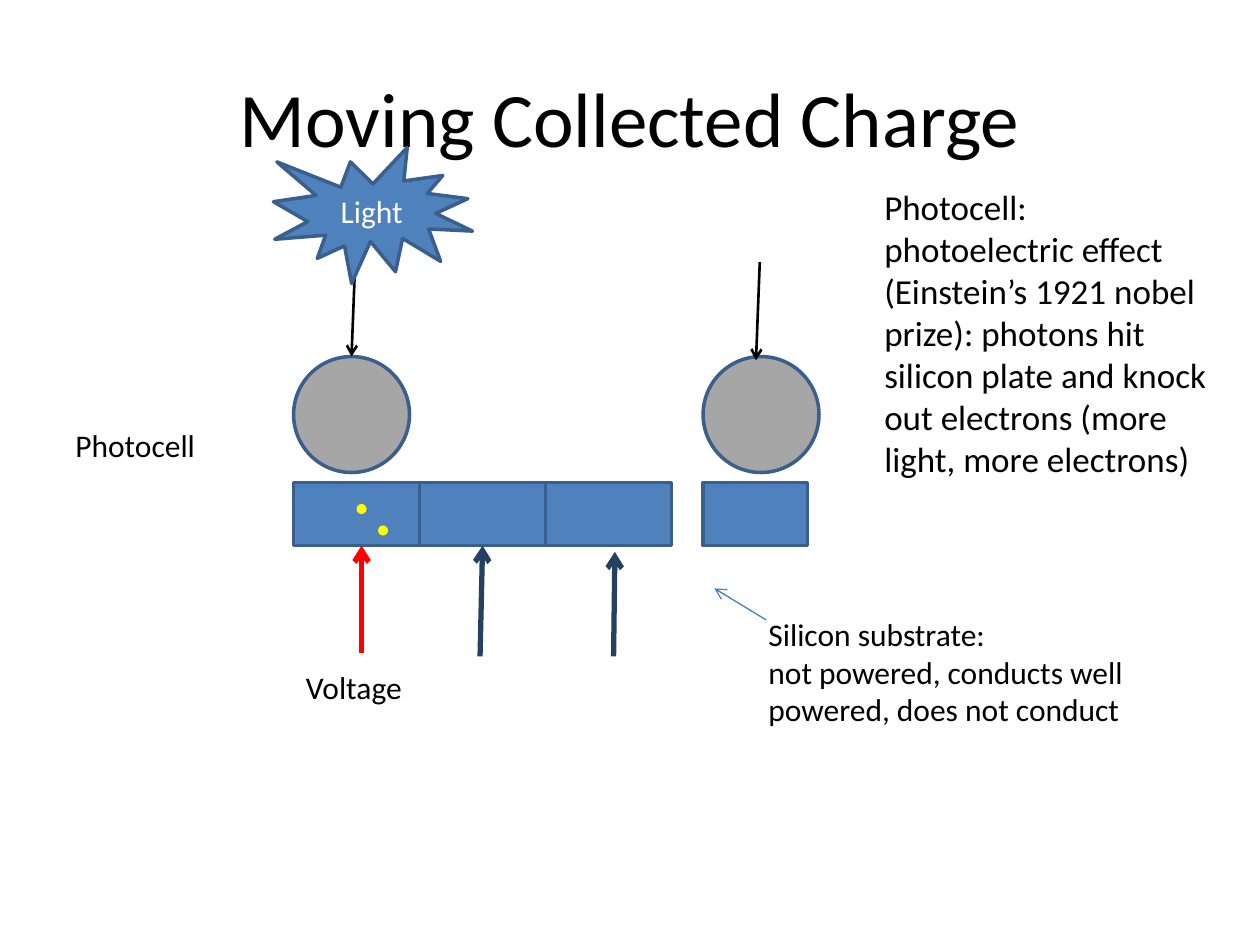
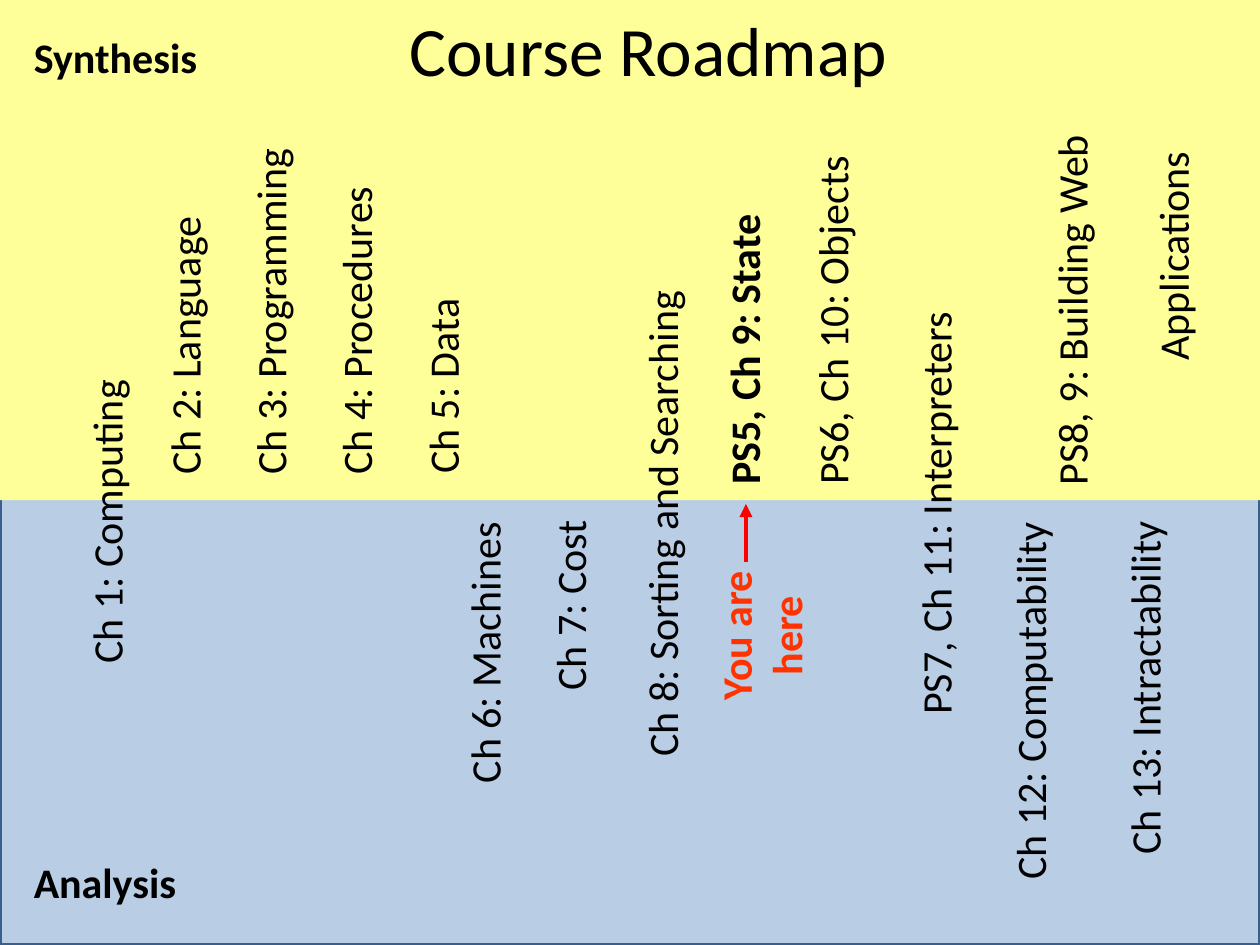
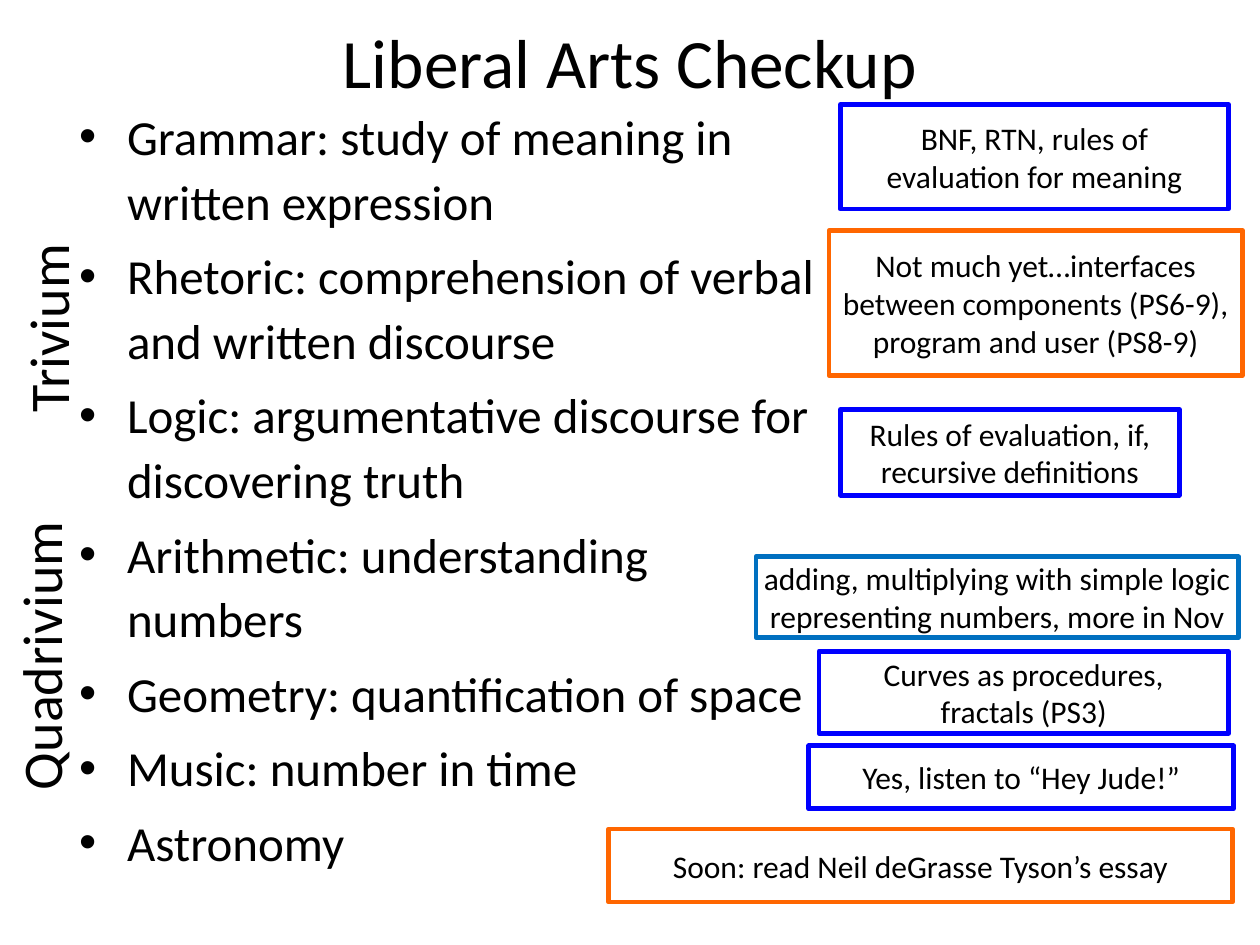
from lxml import etree
from pptx import Presentation
from pptx.dml.color import RGBColor
from pptx.enum.shapes import MSO_CONNECTOR, MSO_SHAPE
from pptx.enum.text import MSO_ANCHOR, PP_ALIGN
from pptx.oxml.ns import qn
from pptx.util import Inches, Pt

RECT, OVAL = MSO_SHAPE.RECTANGLE, MSO_SHAPE.OVAL
BURST, DOT = MSO_SHAPE.EXPLOSION1, MSO_SHAPE.FLOWCHART_CONNECTOR
LEFT, CENTER = PP_ALIGN.LEFT, PP_ALIGN.CENTER
TOP, MIDDLE = MSO_ANCHOR.TOP, MSO_ANCHOR.MIDDLE
STRAIGHT = MSO_CONNECTOR.STRAIGHT

FONT = "Calibri"
BLACK = RGBColor(0x00, 0x00, 0x00)
WHITE = RGBColor(0xFF, 0xFF, 0xFF)
GRAY = RGBColor(0xA6, 0xA6, 0xA6)
BLUE = RGBColor(0x4F, 0x81, 0xBD)
EDGE = RGBColor(0x3A, 0x5F, 0x8C)
THIN = RGBColor(0x4B, 0x7E, 0xBC)
NAVY = RGBColor(0x25, 0x40, 0x61)
PALE = RGBColor(0xB9, 0xCD, 0xE5)
CREAM = RGBColor(0xFF, 0xFF, 0x99)
YELLOW = RGBColor(0xFF, 0xFF, 0x00)
RED = RGBColor(0xFF, 0x00, 0x00)
CORAL = RGBColor(0xFF, 0x33, 0x00)
DONE = RGBColor(0x00, 0x00, 0xFF)
PART = RGBColor(0x00, 0x70, 0xC0)
SOON = RGBColor(0xFF, 0x66, 0x00)
TITLE = dict(align=CENTER, anchor=MIDDLE, wrap=True)


def add(slide, at, text="", kind=None, fill=None, line=None, width=2, size=18,
        color=BLACK, bold=False, align=LEFT, anchor=TOP, wrap=False, turn=0):
    """Add a text box, or a preset shape if kind is given; at is left, top, width, height."""
    place = [Inches(n) for n in at]
    if kind is None:
        shape = slide.shapes.add_textbox(*place)
    else:
        shape = slide.shapes.add_shape(kind, *place)
        shape.shadow.inherit = False
        if fill is None:
            shape.fill.background()
        else:
            shape.fill.solid()
            shape.fill.fore_color.rgb = fill
        if line is None:
            shape.line.fill.background()
        else:
            shape.line.color.rgb = line
            shape.line.width = Pt(width)
    shape.rotation = turn
    if text:
        frame = shape.text_frame
        frame.text = text
        frame.word_wrap = wrap
        frame.vertical_anchor = anchor
        for para in frame.paragraphs:
            para.alignment = align
            for run in para.runs:
                run.font.name = FONT
                run.font.size = Pt(size)
                run.font.bold = bold
                run.font.color.rgb = color
    return shape


def arrow(slide, start, end, color, width, head="arrow"):
    line = slide.shapes.add_connector(STRAIGHT, *[Inches(n) for n in start + end])
    line.line.color.rgb = color
    line.line.width = Pt(width)
    etree.SubElement(line.line._get_or_add_ln(), qn("a:tailEnd"), type=head)
    etree.SubElement(line._element.spPr, qn("a:effectLst"))
    return line


deck = Presentation()
deck.slide_width, deck.slide_height = Inches(10), Inches(7.5)
blank = deck.slide_layouts[6]

# Moving Collected Charge
slide = deck.slides.add_slide(blank)
add(slide, (0.5, 0.3, 9, 1.25), "Moving Collected Charge", size=44, **TITLE)
for left in (2.33, 5.58):
    add(slide, (left, 2.83, 0.92, 0.92), kind=OVAL, fill=GRAY, line=EDGE)
arrow(slide, (2.82, 2.06), (2.79, 2.83), BLACK, 1.5)
arrow(slide, (6.03, 2.08), (6, 2.86), BLACK, 1.5)
cells = [add(slide, (left, 3.83, wide, 0.5), kind=RECT, fill=BLUE, line=EDGE)
         for left, wide in ((2.33, 1), (3.33, 1), (4.33, 1), (5.58, 0.83))]
add(slide, (0.5, 3.33, 1.16, 0.4), "Photocell")
add(slide, (2.17, 1.17, 1.58, 1.08), "Light", BURST, BLUE, EDGE,
    color=WHITE, align=CENTER, anchor=MIDDLE)
add(slide, (6, 4.83, 3.08, 1.01),
    "Silicon substrate:\nnot powered, conducts well\npowered, does not conduct")
arrow(slide, (6.08, 4.92), (5.67, 4.67), THIN, 0.75)
arrow(slide, (2.87, 5.18), (2.87, 4.33), RED, 3)
gate = arrow(slide, (3.81, 5.21), (3.83, 4.33), NAVY, 3)
gate.end_connect(cells[1], 2)
arrow(slide, (4.87, 5.21), (4.88, 4.38), NAVY, 3)
add(slide, (2.33, 5.25, 0.97, 0.4), "Voltage")
for left, top in ((2.83, 4), (3, 4.17)):
    add(slide, (left, top, 0.08, 0.08), kind=DOT, fill=YELLOW)
add(slide, (6.92, 1.42, 3, 2.46),
    "Photocell:\nphotoelectric effect (Einstein’s 1921 nobel prize): photons hit "
    "silicon plate and knock out electrons (more light, more electrons)",
    size=20, wrap=True)

# Course Roadmap
slide = deck.slides.add_slide(blank)
add(slide, (0, 3.92, 10, 3.58), kind=RECT, fill=PALE, line=EDGE)
add(slide, (0, 0, 10, 3.97), kind=RECT, fill=CREAM)
add(slide, (2.61, 0.01, 5.07, 0.75), "Course Roadmap", size=39.6, **TITLE)
add(slide, (0.17, 0.2, 1.51, 0.5), "Synthesis", size=24, bold=True)
add(slide, (0.17, 6.75, 1.34, 0.5), "Analysis", size=24, bold=True)

# Text, centre x, centre y, length
topics = [
    ("Ch 1: Computing", 0.84, 4.13, 2.47),
    ("Ch 2: Language", 1.46, 2.73, 2.27),
    ("Ch 3: Programming", 2.14, 2.46, 2.81),
    ("Ch 4: Procedures", 2.82, 2.61, 2.51),
    ("Ch 5: Data", 3.51, 3.06, 1.6),
    ("Ch 6: Machines", 3.84, 5.17, 2.29),
    ("Ch 7: Cost", 4.52, 4.8, 1.56),
    ("Ch 8: Sorting and Searching", 5.25, 4.14, 3.93),
    ("PS5, Ch 9: State", 5.9, 2.76, 2.37),
    ("PS6, Ch 10: Objects", 6.6, 2.53, 2.83),
    ("PS7, Ch 11: Interpreters", 7.42, 4.06, 3.42),
    ("Ch 12: Computability", 8.17, 5.55, 3.06),
    ("Ch 13: Intractability", 9.08, 5.45, 2.86),
]
for text, x, y, size in topics:
    add(slide, (x - size / 2, y - 0.25, size, 0.5), text, size=24,
        bold=text.startswith("PS5"), turn=270)
web = add(slide, (7.16, 1.95, 3.09, 0.91), "PS8, 9: Building Web\nApplications",
          size=24, wrap=True, turn=270)
last = web.text_frame.paragraphs[1]
last.space_before = Pt(29)
last._p.get_or_add_pPr().set("marL", str(Inches(0.99)))
arrow(slide, (5.92, 4.46), (5.92, 4), RED, 2.5, "triangle")
add(slide, (5.33, 4.59, 1.42, 0.91), "You are here", size=24, color=CORAL,
    bold=True, align=CENTER, wrap=True, turn=270)

# Liberal Arts Checkup
slide = deck.slides.add_slide(blank)
add(slide, (0.5, 0.17, 9, 0.62), "Liberal Arts Checkup", size=39.6, **TITLE)
arts = [
    "Grammar: study of meaning in written expression",
    "Rhetoric: comprehension of verbal and written discourse",
    "Logic: argumentative discourse for discovering truth",
    "Arithmetic: understanding numbers",
    "Geometry: quantification of space",
    "Music: number in time",
    "Astronomy",
]
body = add(slide, (0.53, 0.75, 6.05, 6.34), "\n".join(arts), size=28, wrap=True)
for para in body.text_frame.paragraphs:
    para.line_spacing = 1.1
    para.space_before = Pt(5.6)
    props = para._p.get_or_add_pPr()
    props.set("marL", str(Inches(0.38)))
    props.set("indent", str(Inches(-0.38)))
    etree.SubElement(props, qn("a:buFont"), typeface="Arial")
    etree.SubElement(props, qn("a:buChar"), char="•")

notes = [
    ((6.67, 0.83, 3.08, 0.83), DONE, "BNF, RTN, rules of\nevaluation for meaning"),
    ((6.58, 1.83, 3.28, 1.15), SOON,
     "Not much yet…interfaces\nbetween components (PS6-9),\nprogram and user (PS8-9)"),
    ((6.67, 3.25, 2.69, 0.68), DONE, "Rules of evaluation, if,\nrecursive definitions"),
    ((6, 4.42, 3.83, 0.64), PART,
     "adding, multiplying with simple logic\nrepresenting numbers, more in Nov"),
    ((6.5, 5.17, 3.25, 0.65), DONE, "Curves as procedures,\nfractals (PS3)"),
    ((6.42, 5.92, 3.37, 0.5), DONE, "Yes, listen to “Hey Jude!”"),
    ((4.83, 6.58, 4.95, 0.58), SOON, "Soon: read Neil deGrasse Tyson’s essay"),
]
for at, color, text in notes:
    add(slide, at, text, RECT, line=color, width=2.75, align=CENTER, anchor=MIDDLE)
for left, top, text in ((-0.9, 2.29, "Trivium"), (-0.95, 4.89, "Quadrivium")):
    add(slide, (left, top, 2.54, 0.63), text, size=32, align=CENTER, wrap=True, turn=270)

deck.save("out.pptx")
